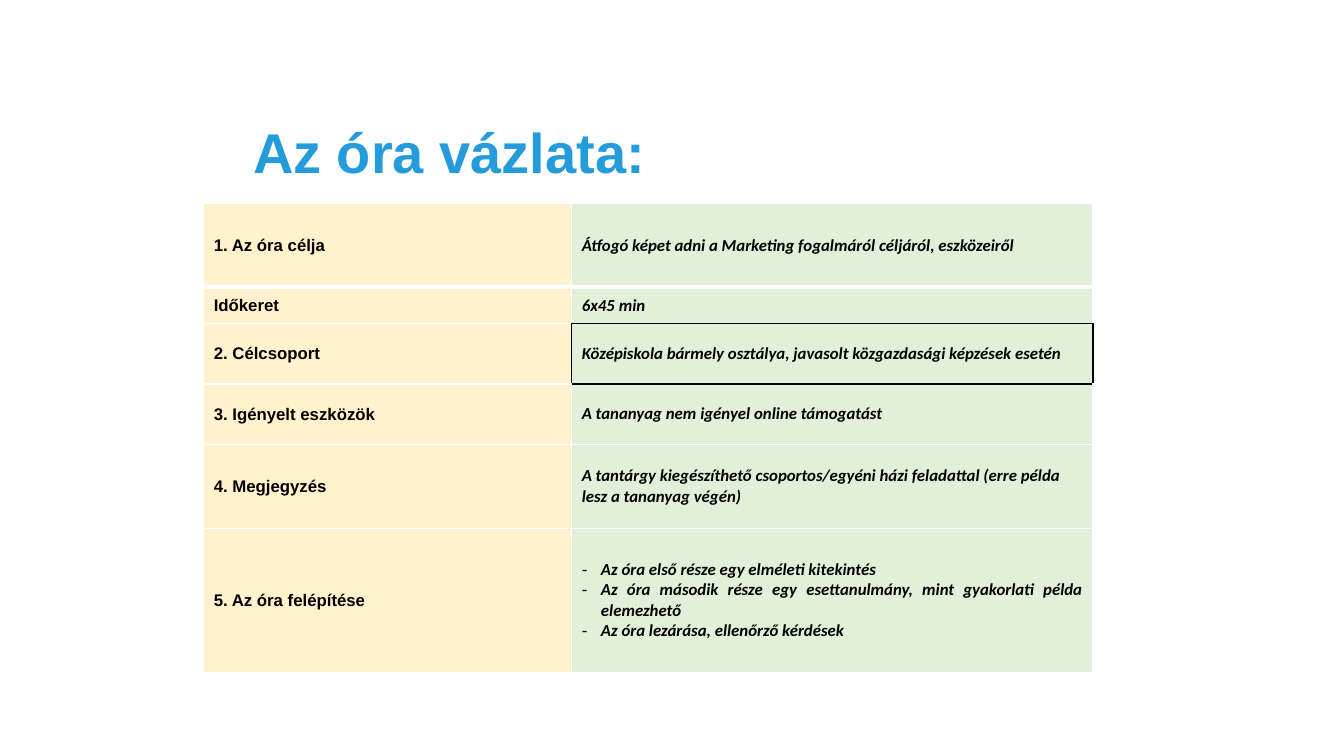
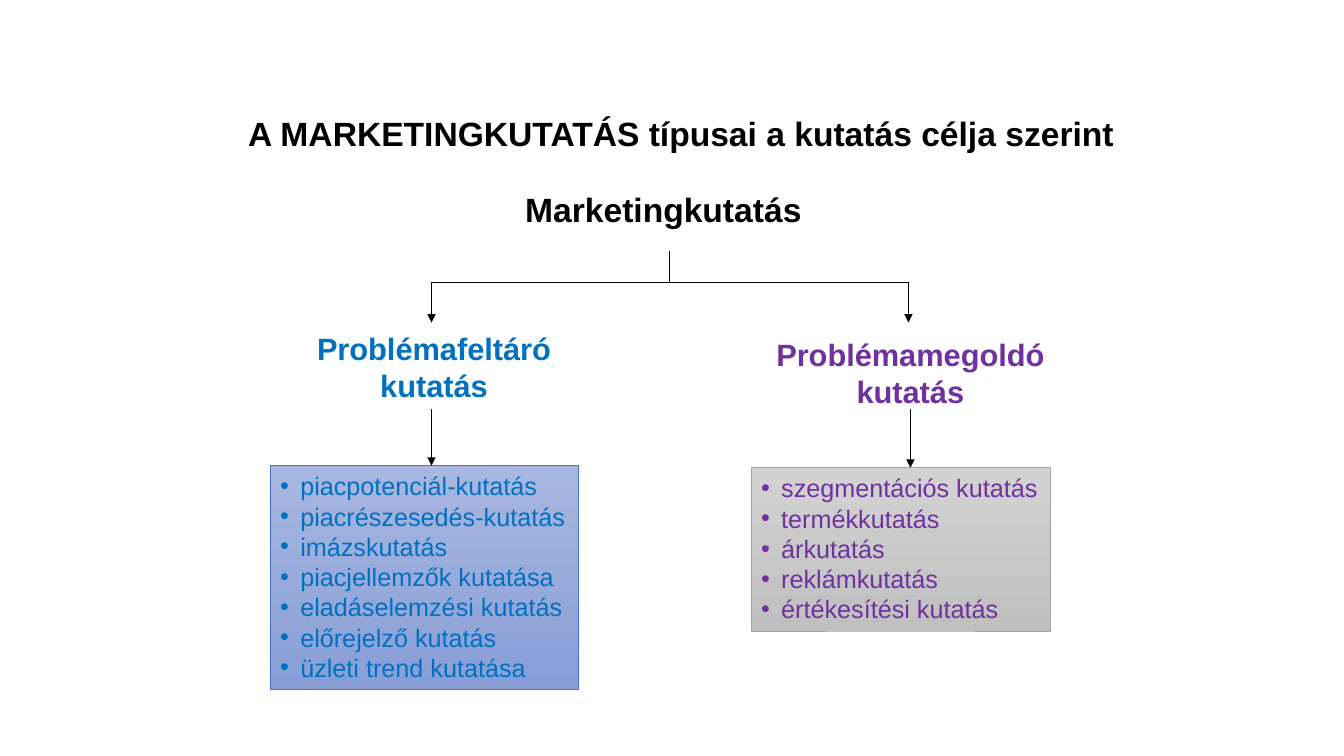
from lxml.etree import SubElement
from pptx import Presentation
from pptx.dml.color import RGBColor
from pptx.enum.shapes import MSO_CONNECTOR, MSO_SHAPE
from pptx.enum.text import MSO_ANCHOR as ANCHOR, MSO_AUTO_SIZE, PP_ALIGN as ALIGN
from pptx.oxml.ns import qn
from pptx.util import Inches, Pt

BLACK = RGBColor(0x00, 0x00, 0x00)
WHITE = RGBColor(0xFF, 0xFF, 0xFF)
SKY = RGBColor(0x24, 0x9C, 0xDC)
CREAM = RGBColor(0xFF, 0xF2, 0xCC)
MINT = RGBColor(0xE2, 0xF0, 0xD9)
BLUE = RGBColor(0x00, 0x70, 0xC0)
PURPLE = RGBColor(0x70, 0x30, 0xA0)
BLUE_PANEL = (RGBColor(0xA8, 0xB7, 0xDF), RGBColor(0x88, 0x9E, 0xD7))
BLUE_EDGE = RGBColor(0x44, 0x72, 0xC4)
GREY_PANEL = (RGBColor(0xD2, 0xD2, 0xD2), RGBColor(0xC0, 0xC0, 0xC0))
GREY_EDGE = RGBColor(0xA5, 0xA5, 0xA5)

HEAD_FONT = "Arial"
CELL_FONT = "Calibri"
TITLE_ONLY = 5

OUTLINE = [
    (0.83, "1. Az óra célja",
     ["Átfogó képet adni a Marketing fogalmáról céljáról, eszközeiről"]),
    (0.36, "Időkeret", ["6x45 min"]),
    (0.6, "2. Célcsoport",
     ["Középiskola bármely osztálya, javasolt közgazdasági képzések esetén"]),
    (0.6, "3. Igényelt eszközök", ["A tananyag nem igényel online támogatást"]),
    (0.83, "4. Megjegyzés",
     ["A tantárgy kiegészíthető csoportos/egyéni házi feladattal "
      "(erre példa lesz a tananyag végén)"]),
    (1.43, "5. Az óra felépítése",
     ["Az óra első része egy elméleti kitekintés",
      "Az óra második része egy esettanulmány, mint gyakorlati példa elemezhető",
      "Az óra lezárása, ellenőrző kérdések"]),
]
FRAMED_ROW = 2
EXPLORING = ["piacpotenciál-kutatás", "piacrészesedés-kutatás", "imázskutatás",
             "piacjellemzők kutatása", "eladáselemzési kutatás",
             "előrejelző kutatás", "üzleti trend kutatása"]
SOLVING = ["szegmentációs kutatás", "termékkutatás", "árkutatás",
           "reklámkutatás", "értékesítési kutatás"]


def inches(*lengths):
    """Turn plain numbers into lengths."""
    return [Inches(length) for length in lengths]


def add_bullet(paragraph, mark, indent):
    """Give a paragraph a hanging bullet."""
    props = paragraph._p.get_or_add_pPr()
    props.set("marL", str(Inches(indent)))
    props.set("indent", str(-Inches(indent)))
    SubElement(props, qn("a:buFont"), typeface=HEAD_FONT)
    SubElement(props, qn("a:buChar"), char=mark)


def write(frame, lines, size, color, bold=False, italic=False, font=HEAD_FONT,
          align=ALIGN.LEFT, bullet=None, indent=0.2):
    """Fill a text frame with equally formatted paragraphs."""
    for index, line in enumerate(lines):
        paragraph = frame.add_paragraph() if index else frame.paragraphs[0]
        paragraph.text = line
        paragraph.alignment = align
        if bullet:
            add_bullet(paragraph, bullet, indent)
        style = paragraph.font
        style.name, style.size = font, Pt(size)
        style.bold, style.italic = bold, italic
        style.color.rgb = color


def add_titled_slide(prs, title, place, size, color, align):
    """Add a slide whose title placeholder is moved and formatted."""
    slide = prs.slides.add_slide(prs.slide_layouts[TITLE_ONLY])
    heading = slide.shapes.title
    heading.left, heading.top, heading.width, heading.height = inches(*place)
    frame = heading.text_frame
    frame.auto_size = MSO_AUTO_SIZE.NONE
    frame.vertical_anchor = ANCHOR.MIDDLE
    write(frame, [title], size, color, bold=True, align=align)
    frame.paragraphs[0].line_spacing = 0.9
    return slide


def set_borders(cell, edges):
    """Draw the four borders of a cell, white and 1 pt unless given in edges."""
    props = cell._tc.get_or_add_tcPr()
    for side in "LRTB":
        color, width = edges.get(side, (WHITE, 1))
        line = SubElement(props, qn(f"a:ln{side}"), w=str(Pt(width)))
        fill = SubElement(line, qn("a:solidFill"))
        SubElement(fill, qn("a:srgbClr"), val=str(color))


def style_cell(cell, fill, edges):
    """Set the borders, fill and anchor of a cell."""
    set_borders(cell, edges)
    cell.fill.solid()
    cell.fill.fore_color.rgb = fill
    cell.vertical_anchor = ANCHOR.MIDDLE


def outline_edges(row):
    """Return the special borders of the label and detail cells of a row."""
    frame = (BLACK, 1)
    if row == 0:
        rule = {"B": (WHITE, 3)}
        return rule, rule
    if row == 1:
        return {"T": (WHITE, 3)}, {"T": (WHITE, 3), "B": frame}
    if row == FRAMED_ROW:
        return {"R": frame}, dict.fromkeys("LRTB", frame)
    return {}, {"T": frame} if row == FRAMED_ROW + 1 else {}


def add_outline(slide):
    """Add the lesson outline table."""
    height = sum(row[0] for row in OUTLINE)
    table = slide.shapes.add_table(
        len(OUTLINE), 2, *inches(2.02, 2.02, 8.82, height)).table
    for column, width in zip(table.columns, inches(3.65, 5.17)):
        column.width = width
    for index, (row_height, label, details) in enumerate(OUTLINE):
        table.rows[index].height = Inches(row_height)
        label_cell, detail_cell = table.rows[index].cells
        label_edges, detail_edges = outline_edges(index)
        style_cell(label_cell, CREAM, label_edges)
        style_cell(detail_cell, MINT, detail_edges)
        write(label_cell.text_frame, [label], 12, BLACK, bold=True)
        listed = len(details) > 1
        write(detail_cell.text_frame, details, 12, BLACK, bold=True, italic=True,
              font=CELL_FONT, align=ALIGN.JUSTIFY if listed else ALIGN.LEFT,
              bullet="-" if listed else None, indent=0.19)


def add_label(slide, place, lines, size, color, align=ALIGN.CENTER):
    """Add a bold unwrapped text box."""
    frame = slide.shapes.add_textbox(*inches(*place)).text_frame
    frame.word_wrap = False
    write(frame, lines, size, color, bold=True, align=align)


def add_panel(slide, place, items, color, shades, edge):
    """Add a gradient box holding a bulleted list."""
    panel = slide.shapes.add_shape(MSO_SHAPE.RECTANGLE, *inches(*place))
    panel.shadow.inherit = False
    panel.fill.gradient()
    panel.fill.gradient_angle = 270
    for stop, shade, position in zip(panel.fill.gradient_stops, shades, (0, 1)):
        stop.color.rgb = shade
        stop.position = position
    panel.line.color.rgb = edge
    panel.line.width = Pt(0.5)
    frame = panel.text_frame
    frame.word_wrap = False
    frame.vertical_anchor = ANCHOR.TOP
    write(frame, items, 18, color, bullet="•")


def add_line(slide, start, end, arrow=False):
    """Add a thin black line, optionally with an arrowhead at its end."""
    line = slide.shapes.add_connector(
        MSO_CONNECTOR.STRAIGHT, *inches(*start, *end))
    line.line.color.rgb = BLACK
    line.line.width = Pt(1)
    props = line._element.spPr
    if arrow:
        SubElement(props.find(qn("a:ln")), qn("a:tailEnd"), type="triangle")
    SubElement(props, qn("a:effectLst"))


def add_research_tree(slide):
    """Add the tree of research types."""
    add_label(slide, (5.11, 1.83, 3.04, 0.5), ["Marketingkutatás"], 24, BLACK,
              ALIGN.LEFT)
    add_label(slide, (3.01, 3.22, 2.59, 0.84), ["Problémafeltáró", "kutatás"],
              22, BLUE)
    add_label(slide, (7.53, 3.28, 3, 0.84), ["Problémamegoldó", "kutatás"],
              22, PURPLE)
    add_panel(slide, (2.68, 4.62, 3.06, 2.22), EXPLORING, BLUE, BLUE_PANEL,
              BLUE_EDGE)
    add_panel(slide, (7.45, 4.64, 2.97, 1.62), SOLVING, PURPLE, GREY_PANEL,
              GREY_EDGE)
    left, right, fork = 4.28, 9.01, 2.8
    add_line(slide, (6.64, 2.49), (6.64, fork))
    add_line(slide, (left, fork), (right, fork))
    for branch in (left, right):
        add_line(slide, (branch, fork), (branch, 3.2), arrow=True)
    for stem, panel_top in ((left, 4.62), (9.03, 4.64)):
        add_line(slide, (stem, 4.06), (stem, panel_top), arrow=True)


def main():
    """Build and save the presentation."""
    prs = Presentation()
    prs.slide_width, prs.slide_height = inches(13.33, 7.5)
    add_outline(add_titled_slide(
        prs, "Az óra vázlata:", (2.41, 1.31, 5.67, 0.47), 40, SKY, ALIGN.LEFT))
    add_research_tree(add_titled_slide(
        prs, "A MARKETINGKUTATÁS típusai a kutatás célja szerint",
        (1.97, 1.1, 9.57, 0.5), 24, BLACK, ALIGN.CENTER))
    prs.save("out.pptx")


if __name__ == "__main__":
    main()
